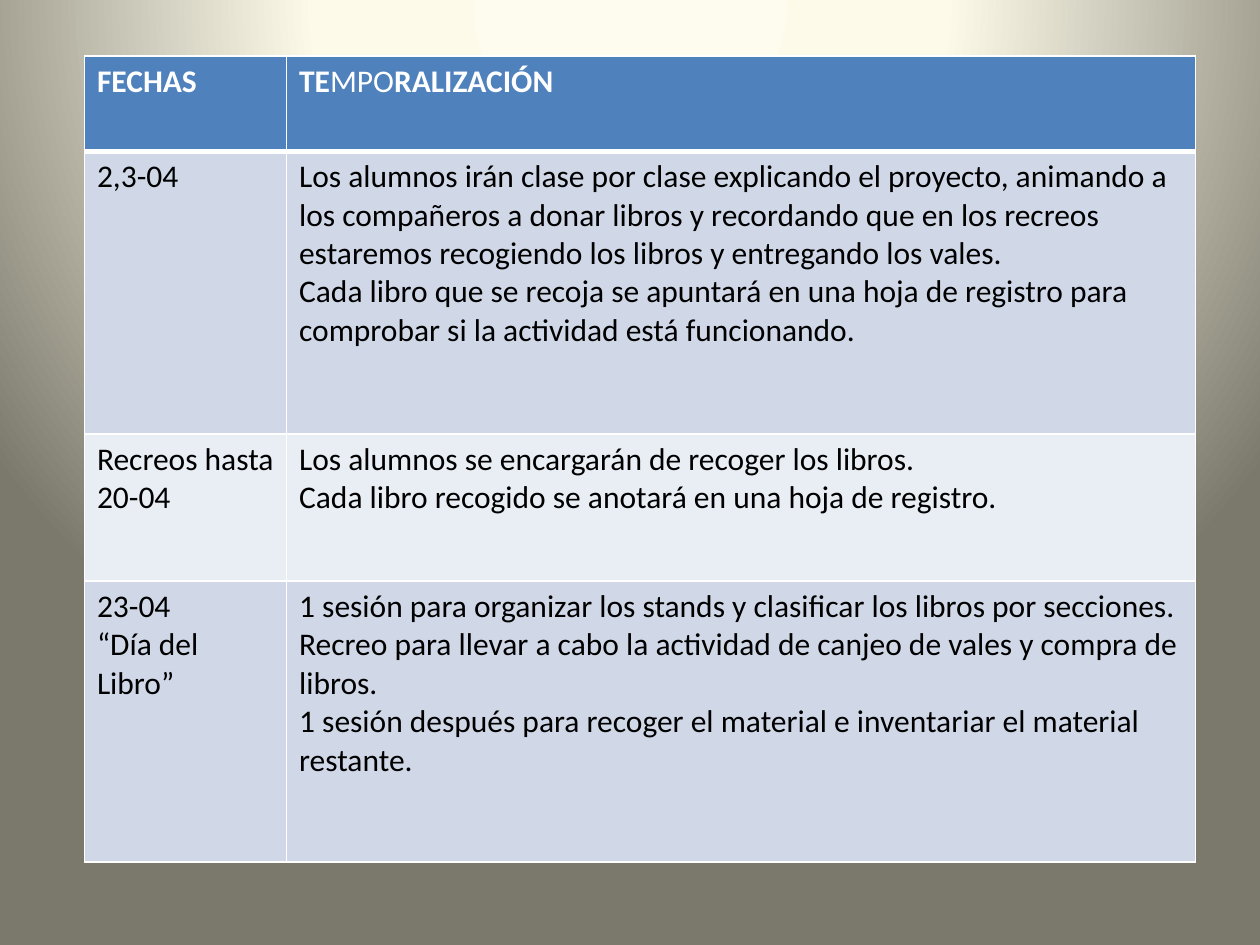
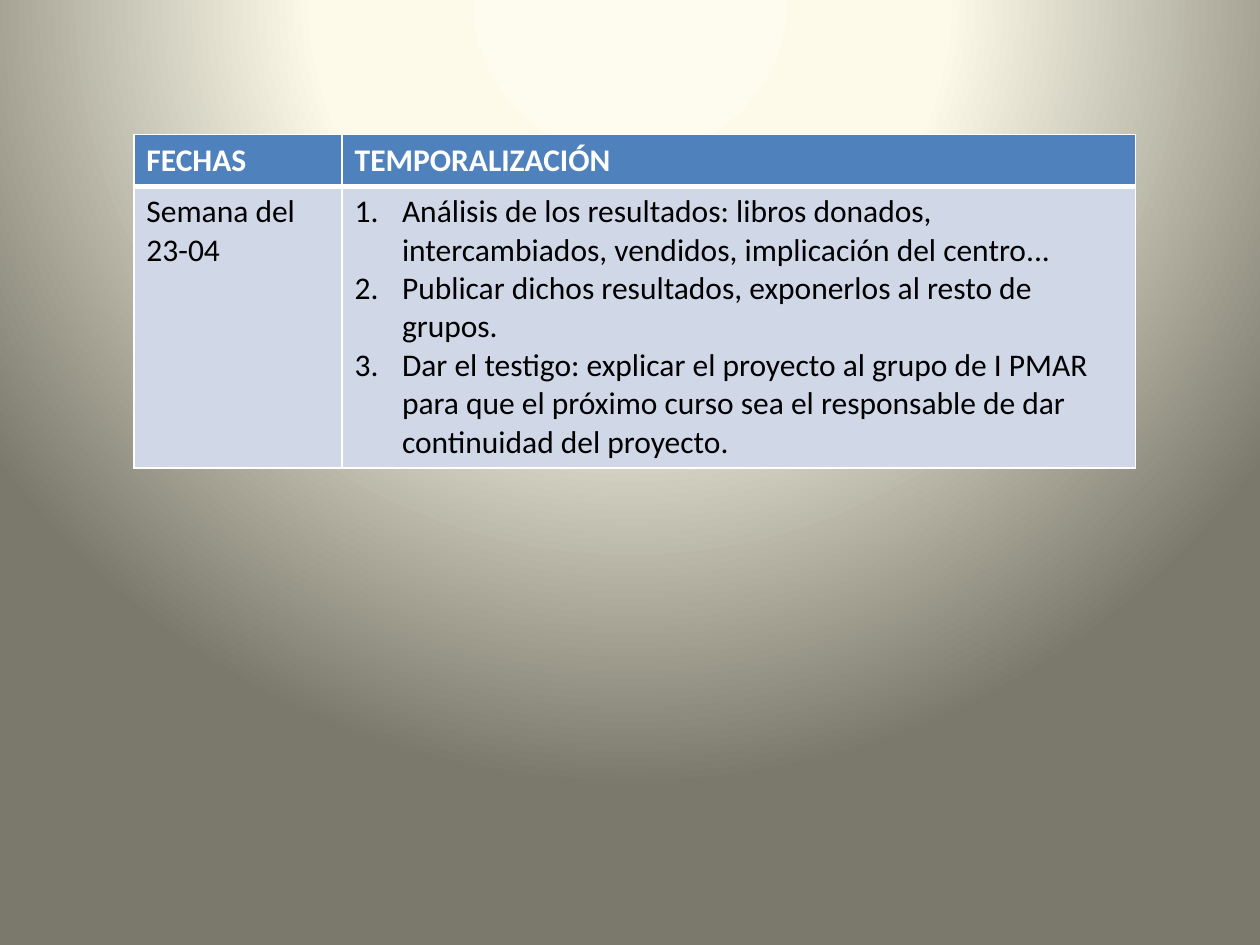
from lxml import etree
from pptx import Presentation
from pptx.dml.color import RGBColor as RGB
from pptx.oxml import parse_xml
from pptx.oxml.ns import nsdecls, qn
from pptx.util import Pt

WHITE = RGB(0xFF, 0xFF, 0xFF)
BLACK = RGB(0x00, 0x00, 0x00)
HEADER = RGB(0x4F, 0x81, 0xBD)
BANDS = [RGB(0xD0, 0xD8, 0xE8), RGB(0xE9, 0xED, 0xF4)]
GRADIENT = [(0, RGB(0xFE, 0xFC, 0xEE)), (40, RGB(0xFD, 0xFA, 0xEA)),
            (100, RGB(0x7B, 0x79, 0x6B))]
HEAD_FONT = {"name": "Calibri", "size": Pt(18), "bold": True}
BODY_FONT = {"name": "Calibri", "size": Pt(18), "bold": False}

# Cell text: paragraphs separated by line; header runs marked light with "|"
TABLES = [
    {
        "at": (48.25, 32), "cols": (115.5, 519.5), "rows": (54.5, 161.5, 84, 160.5),
        "numbered": False,
        "cells": [
            ("FECHAS", "TE|MPO|RALIZACIÓN"),
            ("2,3-04",
             "Los alumnos irán clase por clase explicando el proyecto, animando a "
             "los compañeros a donar libros y recordando que en los recreos "
             "estaremos recogiendo los libros y entregando los vales.\n"
             "Cada libro que se recoja se apuntará en una hoja de registro para "
             "comprobar si la actividad está funcionando."),
            ("Recreos hasta 20-04",
             "Los alumnos se encargarán de recoger los libros.\n"
             "Cada libro recogido se anotará en una hoja de registro."),
            ("23-04\n“Día del Libro”",
             "1 sesión para organizar los stands y clasificar los libros por secciones.\n"
             "Recreo para llevar a cabo la actividad de canjeo de vales y compra de libros.\n"
             "1 sesión después para recoger el material e inventariar el material restante."),
        ],
    },
    {
        "at": (76.5, 77), "cols": (119, 453.5), "rows": (29.5, 161),
        "numbered": True,
        "cells": [
            ("FECHAS", "TEMPORALIZACIÓN"),
            ("Semana del 23-04",
             "Análisis de los resultados: libros donados, intercambiados, vendidos, "
             "implicación del centro...\n"
             "Publicar dichos resultados, exponerlos al resto de grupos.\n"
             "Dar el testigo: explicar el proyecto al grupo de I PMAR para que el "
             "próximo curso sea el responsable de dar continuidad del proyecto."),
        ],
    },
]


def set_borders(cell, widths):
    """Draw white cell borders; widths go left, right, top, bottom."""
    tcPr = cell._tc.get_or_add_tcPr()
    for i, (side, width) in enumerate(zip("LRTB", widths)):
        tcPr.insert(i, parse_xml(
            f'<a:ln{side} {nsdecls("a")} w="{Pt(width)}"><a:solidFill>'
            f'<a:srgbClr val="{WHITE}"/></a:solidFill></a:ln{side}>'))


def number_paragraph(p):
    """Give a paragraph an automatic number and a hanging indent."""
    pPr = p._p.get_or_add_pPr()
    pPr.set("marL", str(Pt(27)))
    pPr.set("indent", str(-Pt(27)))
    etree.SubElement(pPr, qn("a:buFont"), typeface="+mj-lt")
    etree.SubElement(pPr, qn("a:buAutoNum"), type="arabicPeriod")


prs = Presentation()
prs.slide_width, prs.slide_height = Pt(720), Pt(540)

# Shared background: radial gradient on the master
master = prs.slide_master
master.background.fill.solid()
stops = "".join(f'<a:gs pos="{pos * 1000}"><a:srgbClr val="{color}"/></a:gs>'
                for pos, color in GRADIENT)
solid = master.element.find(".//" + qn("p:bgPr")).find(qn("a:solidFill"))
solid.getparent().replace(solid, parse_xml(
    f'<a:gradFill {nsdecls("a")} rotWithShape="1"><a:gsLst>{stops}</a:gsLst>'
    '<a:path path="circle"><a:fillToRect l="50000" t="-80000" r="50000" b="180000"/>'
    '</a:path></a:gradFill>'))

# One schedule table per slide
for data in TABLES:
    s = prs.slides.add_slide(prs.slide_layouts[6])
    cols, rows = data["cols"], data["rows"]
    left, top = data["at"]
    table = s.shapes.add_table(len(rows), len(cols), Pt(left), Pt(top),
                               Pt(sum(cols)), Pt(sum(rows))).table
    for column, width in zip(table.columns, cols):
        column.width = Pt(width)
    for row, height in zip(table.rows, rows):
        row.height = Pt(height)

    for i, texts in enumerate(data["cells"]):
        is_header = i == 0
        for j, text in enumerate(texts):
            cell = table.cell(i, j)
            cell.fill.solid()
            cell.fill.fore_color.rgb = HEADER if is_header else BANDS[(i - 1) % 2]
            set_borders(cell, (1, 1, 3 if i == 1 else 1, 3 if is_header else 1))
            tf = cell.text_frame
            for n, line in enumerate(text.split("\n")):
                p = tf.add_paragraph() if n else tf.paragraphs[0]
                if data["numbered"] and not is_header and j == 1:
                    number_paragraph(p)
                for k, part in enumerate(line.split("|")):
                    r = p.add_run()
                    r.text = part
                    for name, value in (HEAD_FONT if is_header else BODY_FONT).items():
                        setattr(r.font, name, value)
                    r.font.color.rgb = WHITE if is_header else BLACK
                    if k % 2:
                        r.font.bold = False

prs.save("out.pptx")
